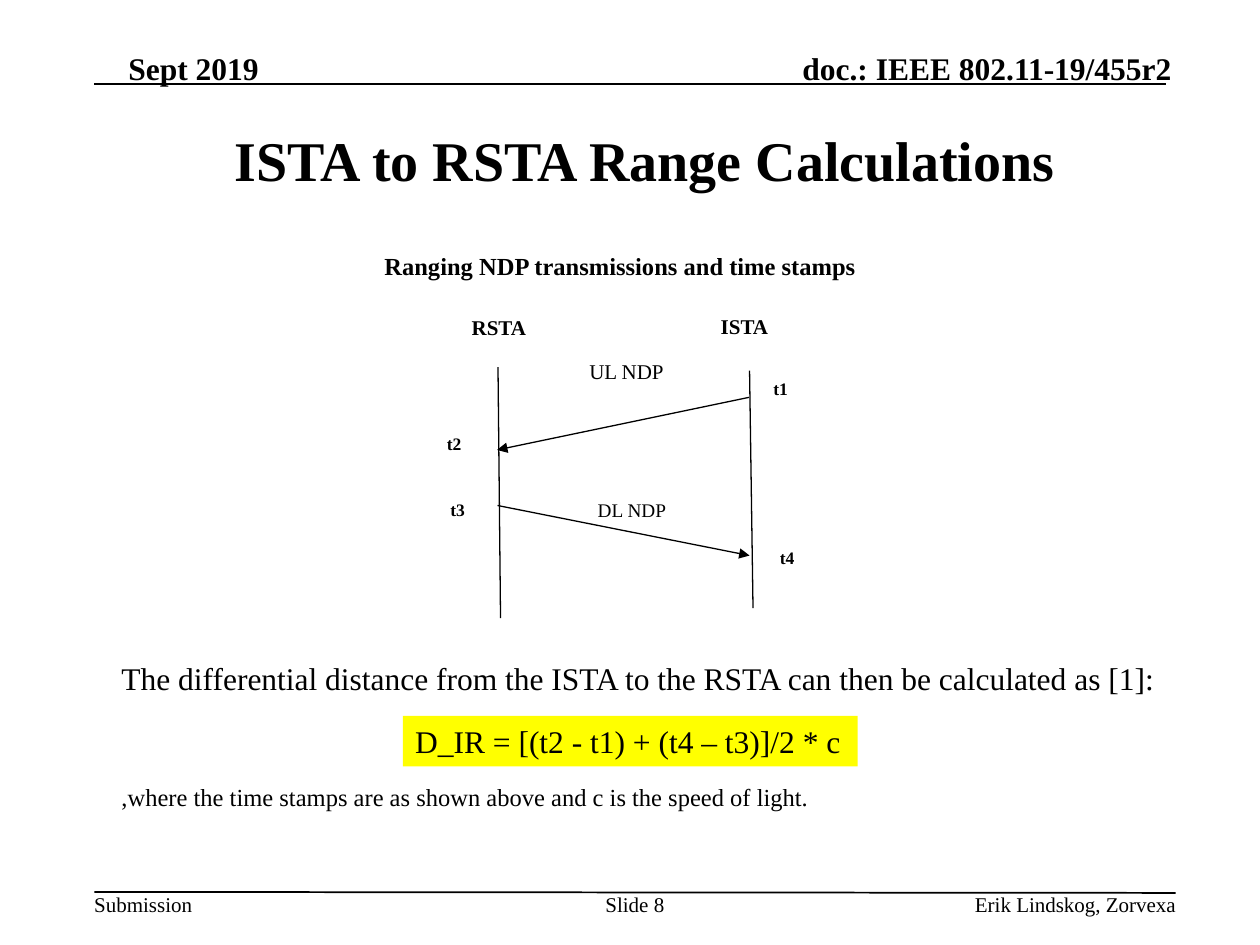
from dataclasses import dataclass

from lxml import etree
from pptx import Presentation
from pptx.dml.color import RGBColor
from pptx.enum.shapes import MSO_CONNECTOR, MSO_SHAPE
from pptx.enum.text import MSO_ANCHOR, PP_ALIGN
from pptx.oxml.ns import qn
from pptx.util import Cm, Pt

BLACK = RGBColor(0x00, 0x00, 0x00)
YELLOW = RGBColor(0xFF, 0xFF, 0x00)
FONT = "Times New Roman"
LEFT, MID, RIGHT = PP_ALIGN.LEFT, PP_ALIGN.CENTER, PP_ALIGN.RIGHT
TOP, CENTER, BOTTOM = MSO_ANCHOR.TOP, MSO_ANCHOR.MIDDLE, MSO_ANCHOR.BOTTOM
STRAIGHT = MSO_CONNECTOR.STRAIGHT
RECT = MSO_SHAPE.RECTANGLE


@dataclass
class Label:
    """Text in a box; lengths in centimetres, size in points."""
    text: str
    x: float
    y: float
    w: float
    h: float
    size: float
    bold: bool = False
    align: PP_ALIGN = LEFT
    anchor: MSO_ANCHOR = TOP
    tight: bool = False
    wrap: bool = True


@dataclass
class Line:
    """Straight line, with an arrowhead at its end if wanted."""
    x1: float
    y1: float
    x2: float
    y2: float
    width: float = 0.75
    arrow: bool = False


def style(shape, label: Label) -> None:
    frame = shape.text_frame
    frame.text = label.text
    frame.word_wrap = label.wrap
    frame.vertical_anchor = label.anchor
    if label.tight:
        frame.margin_left = frame.margin_right = 0
        frame.margin_top = frame.margin_bottom = 0
    for para in frame.paragraphs:
        para.alignment = label.align
        for run in para.runs:
            font = run.font
            font.name, font.size, font.bold = FONT, Pt(label.size), label.bold
            font.color.rgb = BLACK


def add_label(slide, label: Label):
    box = slide.shapes.add_textbox(
        Cm(label.x), Cm(label.y), Cm(label.w), Cm(label.h))
    style(box, label)
    return box


def add_line(slide, line: Line) -> None:
    link = slide.shapes.add_connector(
        STRAIGHT, Cm(line.x1), Cm(line.y1), Cm(line.x2), Cm(line.y2))
    link.line.color.rgb = BLACK
    link.line.width = Pt(line.width)
    if line.arrow:
        etree.SubElement(link.line._get_or_add_ln(), qn("a:tailEnd"),
                         type="triangle")
    etree.SubElement(link._element.spPr, qn("a:effectLst"))


LINES = [
    # Header and footer rules
    Line(1.9, 1.7, 23.5, 1.7, 1),
    Line(1.9, 17.98, 23.7, 18, 1),
    # Station time lines
    Line(10.04, 7.4, 10.09, 12.46),
    Line(15.11, 7.47, 15.18, 12.26),
    # Ranging messages
    Line(15.1, 8.01, 10.02, 9.07, arrow=True),
    Line(10.03, 10.19, 15.11, 11.2, arrow=True),
]

LABELS = [
    # Header
    Label("Sept 2019", 2.59, 0.99, 6, 0.76, 18, True, LEFT, BOTTOM, True),
    Label("doc.: IEEE 802.11-19/455r2", 13.62, 0.99, 10, 0.76, 18, True,
          RIGHT, BOTTOM, True),
    # Footer
    Label("Submission", 1.9, 17.98, 2, 0.5, 12, tight=True, wrap=False),
    Label("Slide 8", 12.06, 17.98, 1.48, 0.5, 12, align=MID, tight=True),
    Label("Erik Lindskog, Zorvexa", 14.88, 17.98, 8.83, 0.5, 12,
          align=RIGHT, tight=True),
    # Diagram heading and stations
    Label("Ranging NDP transmissions and time stamps", 7.5, 4.93, 10.1, 0.86,
          14, True, wrap=False),
    Label("RSTA", 9.26, 6.22, 1.78, 0.76, 12, True),
    Label("ISTA", 14.28, 6.2, 1.78, 0.76, 12, True),
    # Time stamps
    Label("t1", 15.34, 7.49, 1, 0.69, 10, True),
    Label("t2", 8.76, 8.61, 1, 0.69, 10, True),
    Label("t3", 8.83, 9.93, 1, 0.69, 10, True),
    Label("t4", 15.47, 10.9, 1, 0.69, 10, True),
    # Message names
    Label("UL NDP", 11.63, 7.11, 2.16, 0.76, 12),
    Label("DL NDP", 11.8, 9.93, 1.95, 0.61, 11),
]

TITLE = Label("ISTA to RSTA Range Calculations", 2.2, 2.11, 21.6, 2.2, 32,
              True, MID, CENTER)
BODY = Label("The differential distance from the ISTA to the RSTA can then be "
             "calculated as [1]:\n,where the time stamps are as shown above "
             "and c is the speed of light.", 2.2, 13.17, 21.6, 2.7, 18)
RULE = Label("D_IR = [(t2 - t1) + (t4 – t3)]/2 * c", 8.12, 14.43, 9.17, 1.02,
             18, wrap=False)


def main() -> None:
    deck = Presentation()
    deck.slide_width, deck.slide_height = Cm(25.4), Cm(19.05)
    slide = deck.slides.add_slide(deck.slide_layouts[5])

    # Title
    title = slide.shapes.title
    title.left, title.top = Cm(TITLE.x), Cm(TITLE.y)
    title.width, title.height = Cm(TITLE.w), Cm(TITLE.h)
    style(title, TITLE)

    # Rules, diagram and small texts
    for line in LINES:
        add_line(slide, line)
    for label in LABELS:
        add_label(slide, label)

    # Body text, with room for the formula between its paragraphs
    last = add_label(slide, BODY).text_frame.paragraphs[1]
    last.space_before = Pt(48.5)
    last.runs[0].font.size = Pt(14)

    # Formula
    band = slide.shapes.add_shape(
        RECT, Cm(RULE.x), Cm(RULE.y), Cm(RULE.w), Cm(RULE.h))
    band.shadow.inherit = False
    band.fill.solid()
    band.fill.fore_color.rgb = YELLOW
    band.line.fill.background()
    style(band, RULE)

    deck.save("out.pptx")


if __name__ == "__main__":
    main()
